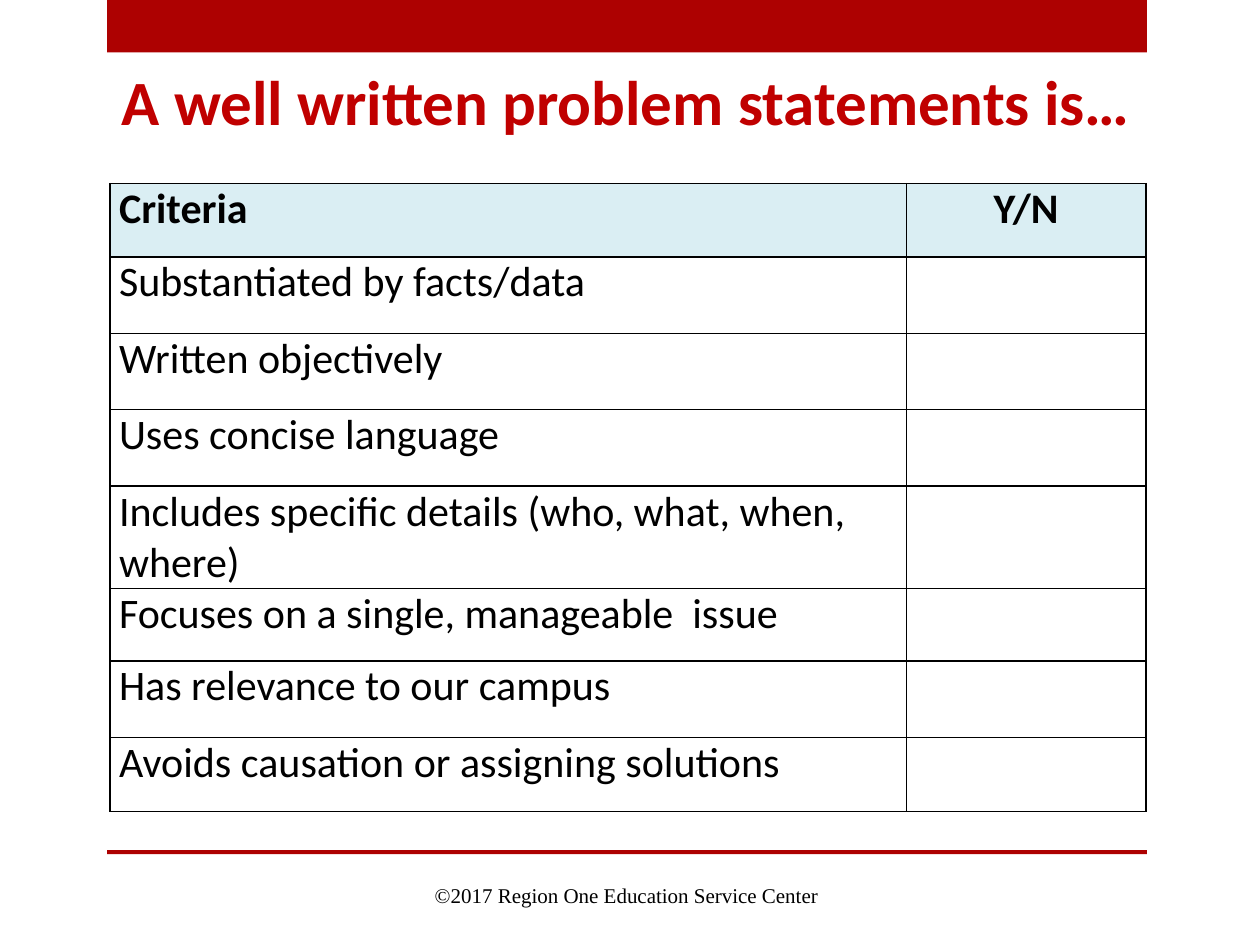
from lxml import etree
from pptx import Presentation, util as u
from pptx.dml.color import RGBColor
from pptx.enum import shapes, text
from pptx.oxml.ns import qn

RED, BLACK = "AD0101", "000000"


def add_run(frame, words, size, font, color, bold=False):
    run = frame.paragraphs[0].add_run()
    run.text = words
    run.font.size = u.Pt(size)
    run.font.name = font
    run.font.bold = bold
    run.font.color.rgb = RGBColor.from_string(color)


def add_edges(cell):
    """Draw a thin black line on all four sides of a cell."""
    props = cell._tc.get_or_add_tcPr()
    for i, side in enumerate(("a:lnL", "a:lnR", "a:lnT", "a:lnB")):
        line = etree.Element(qn(side), w=str(u.Pt(1)))
        fill = etree.SubElement(line, qn("a:solidFill"))
        etree.SubElement(fill, qn("a:srgbClr"), val=BLACK)
        props.insert(i, line)


deck = Presentation()
deck.slide_width, deck.slide_height = u.Cm(25.4), u.Cm(19.05)
slide = deck.slides.add_slide(deck.slide_layouts[6])

# Red bands at top and bottom
for top, high in ((0, 1.06), (17.14, 0.08)):
    band = slide.shapes.add_shape(
        shapes.MSO_SHAPE.RECTANGLE, u.Cm(2.16), u.Cm(top), u.Cm(20.96), u.Cm(high))
    band.shadow.inherit = False
    band.fill.solid()
    band.fill.fore_color.rgb = RGBColor.from_string(RED)
    band.line.fill.background()

# Checklist
items = [
    ("Criteria", 1.48),
    ("Substantiated by facts/data", 1.54),
    ("Written objectively", 1.54),
    ("Uses concise language", 1.54),
    ("Includes specific details (who, what, when, where)", 1.36),
    ("Focuses on a single, manageable  issue", 1.46),
    ("Has relevance to our campus", 1.54),
    ("Avoids causation or assigning solutions", 1.49),
]
grid = slide.shapes.add_table(
    len(items), 2, u.Cm(2.22), u.Cm(3.7), u.Cm(20.88), u.Cm(12.65)).table
grid.columns[0].width = u.Cm(16.05)
grid.columns[1].width = u.Cm(4.83)
for i, (item, high) in enumerate(items):
    head = i == 0
    grid.rows[i].height = u.Cm(high)
    for cell, words in zip(grid.rows[i].cells, (item, "Y/N" if head else "")):
        cell.margin_left = cell.margin_right = u.Cm(0.18)
        cell.margin_top = cell.margin_bottom = 0
        if head:
            cell.fill.solid()
            cell.fill.fore_color.rgb = RGBColor.from_string("DAEEF3")
        else:
            cell.fill.background()
        add_edges(cell)
        if words:
            add_run(cell.text_frame, words, 24, "Calibri", BLACK, head)
grid.cell(0, 1).text_frame.paragraphs[0].alignment = text.PP_ALIGN.CENTER

# Title
title = slide.shapes.add_textbox(
    u.Cm(2.21), u.Cm(1.14), u.Cm(21.2), u.Cm(2.57)).text_frame
title.word_wrap = True
add_run(title, "A well written problem statements is…", 36, "Calibri", "C00000", True)

# Footer
foot = slide.shapes.add_textbox(
    u.Cm(2.21), u.Cm(17.53), u.Cm(20.85), u.Cm(1.02)).text_frame
foot.word_wrap = True
foot.vertical_anchor = text.MSO_ANCHOR.MIDDLE
foot.paragraphs[0].alignment = text.PP_ALIGN.CENTER
add_run(foot, "©2017 Region One Education Service Center", 12, "Times New Roman", BLACK)

deck.save("out.pptx")
